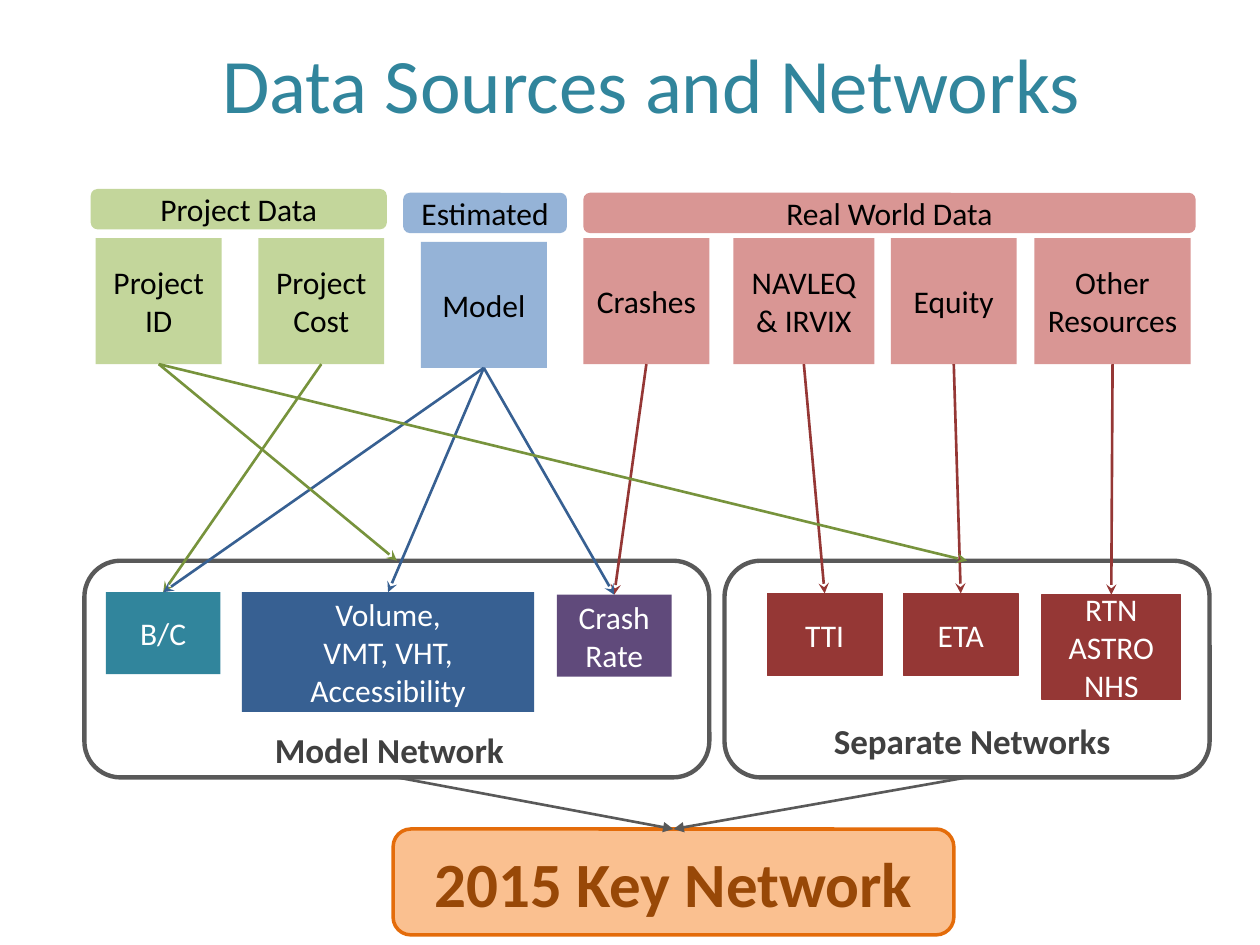
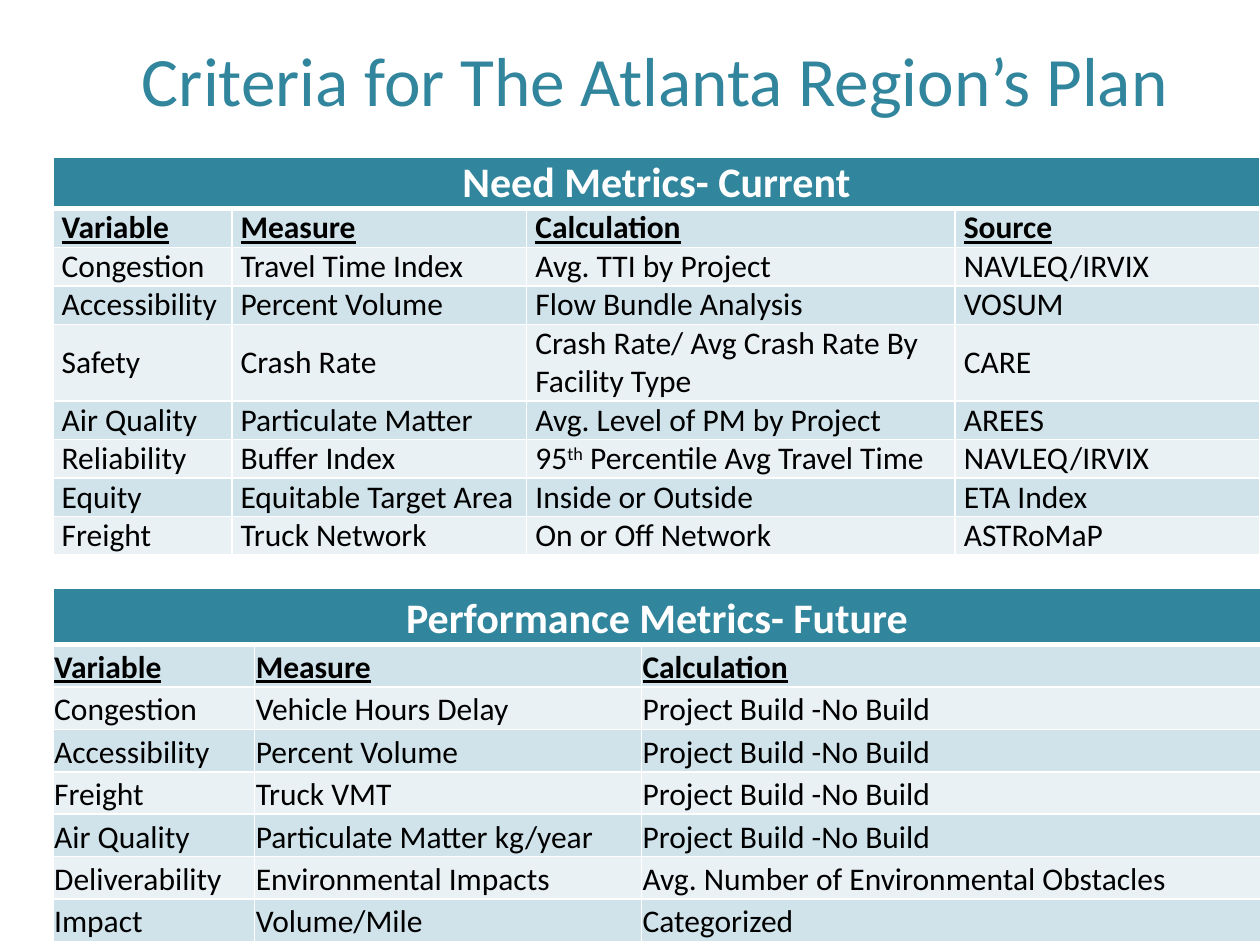
from dataclasses import dataclass

from lxml.etree import SubElement
from pptx import Presentation
from pptx.dml.color import RGBColor
from pptx.enum.shapes import MSO_CONNECTOR, MSO_SHAPE
from pptx.enum.text import MSO_ANCHOR, MSO_AUTO_SIZE, PP_ALIGN
from pptx.oxml.ns import qn
from pptx.util import Pt

PX = 9144  # EMU in one px, 100 px to the inch
TOP, BOTTOM = 0, 2  # connection sites


@dataclass(frozen=True)
class Theme:
    font: str = "Calibri"
    teal: str = "31859C"
    white: str = "FFFFFF"
    black: str = "000000"
    gray: str = "595959"
    label: str = "404040"
    green_light: str = "C3D69B"
    green: str = "77933C"
    blue_light: str = "95B3D7"
    blue: str = "376092"
    red_light: str = "D99694"
    red: str = "953735"
    purple: str = "604A7B"
    orange_light: str = "FAC090"
    orange: str = "E46C0A"
    brown: str = "984807"
    bands: tuple = ("D0E3EA", "E9F1F5")
    title: float = 44
    title_small: float = 39.6
    key: float = 36
    table_head: float = 24
    network: float = 20
    body: float = 18


T = Theme()


class Deck:
    def __init__(self):
        self.prs = Presentation()
        self.prs.slide_width, self.prs.slide_height = 1000 * PX, 750 * PX
        self.s = None

    def slide(self, title, x, y, size):
        self.s = self.prs.slides.add_slide(self.prs.slide_layouts[5])
        sp = self.s.shapes.title
        sp.left, sp.top, sp.width, sp.height = (v * PX for v in (x, y, 900, 125))
        tf = sp.text_frame
        tf.auto_size = MSO_AUTO_SIZE.NONE
        tf.vertical_anchor = MSO_ANCHOR.MIDDLE
        self.add_text(tf, title, size, T.teal)

    def add_text(self, tf, text, size, color, bold=False, underline=False,
                 align=PP_ALIGN.CENTER, spacing=None):
        """One paragraph a line; text between ^ marks is superscript."""
        tf.word_wrap = True
        for i, line in enumerate(text.split("\n")):
            p = tf.paragraphs[0] if i == 0 else tf.add_paragraph()
            p.alignment = align
            if spacing:
                p.line_spacing = spacing
            for j, part in enumerate(line.split("^")):
                r = p.add_run()
                r.text = part
                r.font.name, r.font.size = T.font, Pt(size)
                r.font.bold, r.font.underline = bold, underline
                r.font.color.rgb = RGBColor.from_string(color)
                if j % 2:
                    r._r.get_or_add_rPr().set("baseline", "30000")

    def box(self, at, text="", fill=None, color=T.black, line=None, weight=0.75,
            size=T.body, bold=False, rounded=False):
        kind = MSO_SHAPE.ROUNDED_RECTANGLE if rounded else MSO_SHAPE.RECTANGLE
        sp = self.s.shapes.add_shape(kind, *(v * PX for v in at))
        sp.shadow.inherit = False
        if fill:
            sp.fill.solid()
            sp.fill.fore_color.rgb = RGBColor.from_string(fill)
        else:
            sp.fill.background()
        if line:
            sp.line.color.rgb = RGBColor.from_string(line)
            sp.line.width = Pt(weight)
        else:
            sp.line.fill.background()
        if text:
            sp.text_frame.vertical_anchor = MSO_ANCHOR.MIDDLE
            self.add_text(sp.text_frame, text, size, color, bold)
        return sp

    def label(self, at, text):
        tf = self.s.shapes.add_textbox(*(v * PX for v in at)).text_frame
        tf.auto_size = MSO_AUTO_SIZE.SHAPE_TO_FIT_TEXT
        self.add_text(tf, text, T.network, T.label, bold=True)

    def arrow(self, start, end, color, head="stealth"):
        c = self.s.shapes.add_connector(MSO_CONNECTOR.STRAIGHT, 0, 0, 0, 0)
        c.begin_connect(start, BOTTOM)
        c.end_connect(end, TOP)
        c.line.color.rgb = RGBColor.from_string(color)
        c.line.width = Pt(1.5)
        SubElement(c.line._get_or_add_ln(), qn("a:tailEnd"), type=head)
        SubElement(c._element.spPr, qn("a:effectLst"))

    def borders(self, cell, top=1, bottom=1):
        tcPr = cell._tc.get_or_add_tcPr()
        for side, weight in (("L", 1), ("R", 1), ("T", top), ("B", bottom)):
            ln = SubElement(tcPr, qn(f"a:ln{side}"), w=str(int(Pt(weight))))
            SubElement(SubElement(ln, qn("a:solidFill")), qn("a:srgbClr"), val=T.white)

    def table(self, at, heading, rows, widths, heights, margins, anchor, spacing=None):
        """Heading over all columns, then underlined column names, then banded rows."""
        data = [[heading] + [""] * (len(widths) - 1)] + rows
        size = (sum(widths) * PX, sum(heights) * PX)
        frame = self.s.shapes.add_table(len(data), len(widths), *(v * PX for v in at), *size)
        tbl = frame.table
        tbl.horz_banding = False
        for col, w in zip(tbl.columns, widths):
            col.width = w * PX
        for row, h in zip(tbl.rows, heights):
            row.height = h * PX
        tbl.cell(0, 0).merge(tbl.cell(0, len(widths) - 1))
        for i, values in enumerate(data):
            for j, text in enumerate(values):
                cell = tbl.cell(i, j)
                self.borders(cell, top=3 if i == 1 else 1, bottom=3 if i == 0 else 1)
                cell.fill.solid()
                fill = T.bands[(i - 1) % 2] if i else T.teal
                cell.fill.fore_color.rgb = RGBColor.from_string(fill)
                cell.vertical_anchor = anchor
                (cell.margin_left, cell.margin_top,
                 cell.margin_right, cell.margin_bottom) = (v * PX for v in margins)
                if i:
                    self.add_text(cell.text_frame, text, T.body, T.black, bold=i == 1,
                                  underline=i == 1, align=PP_ALIGN.LEFT, spacing=spacing)
                elif text:
                    self.add_text(cell.text_frame, text, T.table_head, T.white, bold=True,
                                  spacing=spacing)


def networks_slide(d):
    d.slide("Data Sources and Networks", 67, 3, T.title)

    # Source groups
    for x, y, w, text, fill in (
        (72, 150, 235, "Project Data", T.green_light),
        (320, 153, 130, "Estimated", T.blue_light),
        (463, 153, 486, "Real World Data", T.red_light),
    ):
        d.box((x, y, w, 32), text, fill, rounded=True)

    # Data sources
    sources = {
        name: d.box((x, y, w, 100), text, fill)
        for name, x, y, w, text, fill in (
            ("id", 76, 189, 100, "Project ID", T.green_light),
            ("cost", 205, 189, 100, "Project Cost", T.green_light),
            ("model", 334, 192, 100, "Model", T.blue_light),
            ("crashes", 463, 189, 100, "Crashes", T.red_light),
            ("traffic", 582, 189, 112, "NAVLEQ & IRVIX", T.red_light),
            ("equity", 707, 189, 100, "Equity", T.red_light),
            ("other", 821, 189, 124, "Other\nResources", T.red_light),
        )
    }

    # Measures
    measures = {
        name: d.box(at, text, fill, T.white, line)
        for name, at, text, fill, line in (
            ("bc", (84, 470, 91, 65), "B/C", T.teal, None),
            ("volume", (192, 470, 232, 95), "Volume,\nVMT, VHT,\nAccessibility", T.blue, None),
            ("crash_rate", (442, 472, 91, 65), "Crash\nRate", T.purple, None),
            ("tti", (609, 471, 91, 65), "TTI", T.red, T.red),
            ("eta", (717, 471, 91, 65), "ETA", T.red, T.red),
            ("rtn", (827, 472, 110, 83), "RTN\nASTRO\nNHS", T.red, T.red),
        )
    }

    # Networks
    d.label((55, 573, 508, 44), "Model Network")
    d.label((582, 566, 379, 44), "Separate Networks")
    model_net, separate_net = (
        d.box((x, 445, w, 172), line=T.gray, weight=2.5, rounded=True)
        for x, w in ((67, 496), (575, 385))
    )
    key_net = d.box((312, 658, 445, 84), "2015 Key Network", T.orange_light, T.brown,
                    T.orange, 2, T.key, bold=True, rounded=True)

    # Flows
    for source, target, color in (
        ("cost", "bc", T.green),
        ("model", "bc", T.blue),
        ("model", "volume", T.blue),
        ("crashes", "crash_rate", T.red),
        ("traffic", "tti", T.red),
        ("equity", "eta", T.red),
        ("other", "rtn", T.red),
        ("model", "crash_rate", T.blue),
    ):
        d.arrow(sources[source], measures[target], color)
    for net in (model_net, separate_net):
        d.arrow(sources["id"], net, T.green)
        d.arrow(net, key_net, T.gray, "triangle")


def criteria_slide(d):
    d.slide("Criteria for The Atlanta Region’s Plan", 70, 0, T.title_small)

    # Current needs
    needs = [
        ["Variable", "Measure", "Calculation", "Source"],
        ["Congestion", "Travel Time Index", "Avg. TTI by Project", "NAVLEQ/IRVIX"],
        ["Accessibility", "Percent Volume", "Flow Bundle Analysis", "VOSUM"],
        ["Safety", "Crash Rate", "Crash Rate/ Avg Crash Rate By Facility Type", "CARE"],
        ["Air Quality", "Particulate Matter", "Avg. Level of PM by Project", "AREES"],
        ["Reliability", "Buffer Index", "95^th^ Percentile Avg Travel Time", "NAVLEQ/IRVIX"],
        ["Equity", "Equitable Target Area", "Inside or Outside", "ETA Index"],
        ["Freight", "Truck Network", "On or Off Network", "ASTRoMaP"],
    ]
    d.table((42, 125), "Need Metrics- Current", needs, (142, 234, 340, 242),
            [39] + [30] * 3 + [60] + [30] * 4, (7, 0, 7, 0), MSO_ANCHOR.MIDDLE)

    # Future performance
    change = "Project Build -No Build"
    performance = [
        ["Variable", "Measure", "Calculation"],
        ["Congestion", "Vehicle Hours Delay", change],
        ["Accessibility", "Percent Volume", change],
        ["Freight", "Truck VMT", change],
        ["Air Quality", "Particulate Matter kg/year", change],
        ["Deliverability", "Environmental Impacts", "Avg. Number of Environmental Obstacles"],
        ["Impact", "Volume/Mile", "Categorized"],
    ]
    d.table((42, 467), "Performance Metrics- Future", performance, (160, 307, 492),
            [43] + [33] * 7, (1, 1, 1, 0), MSO_ANCHOR.BOTTOM, 1.07)


def main():
    d = Deck()
    networks_slide(d)
    criteria_slide(d)
    d.prs.save("out.pptx")


if __name__ == "__main__":
    main()
